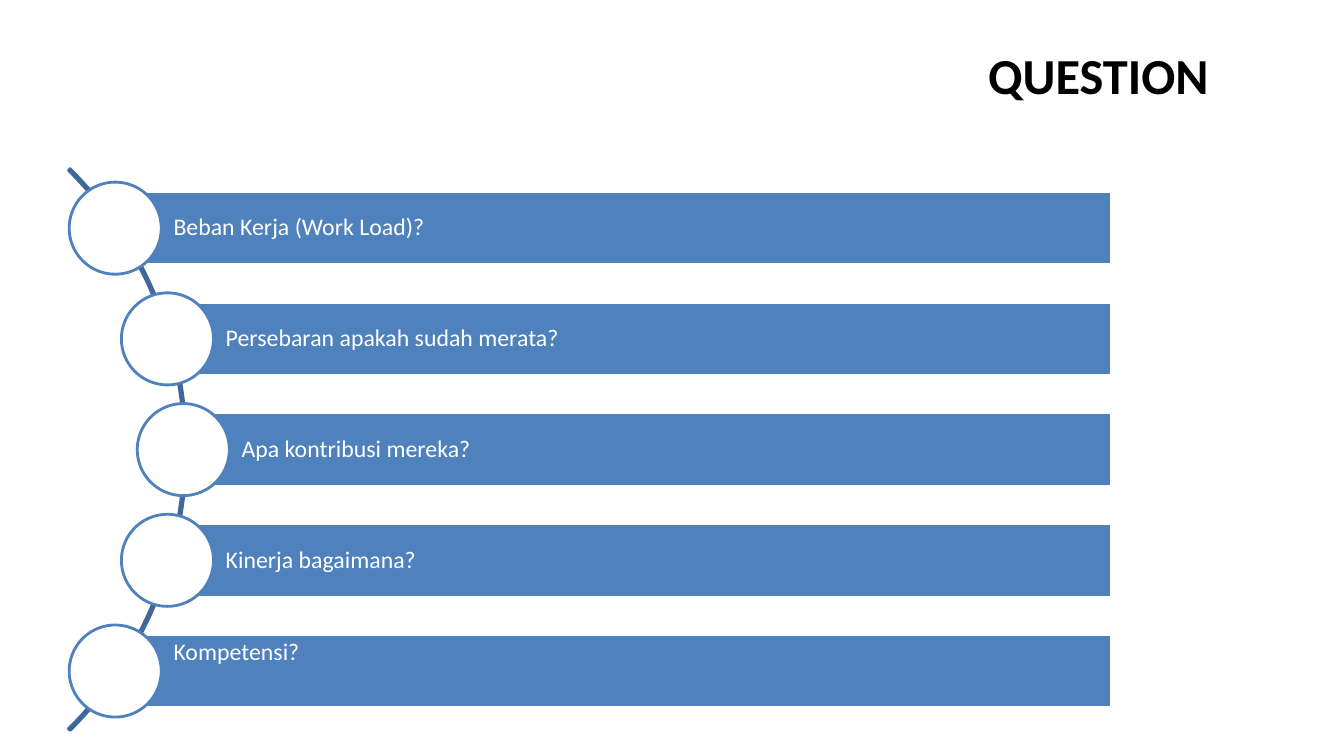
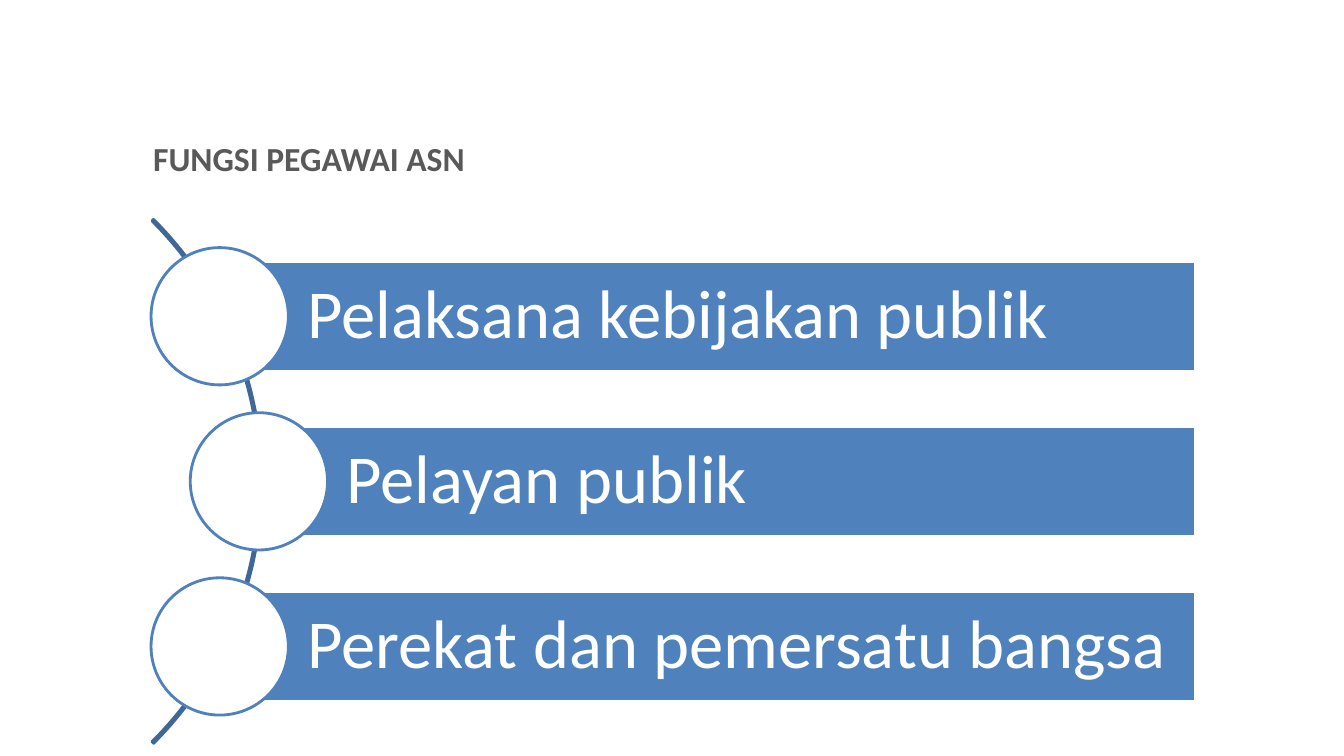
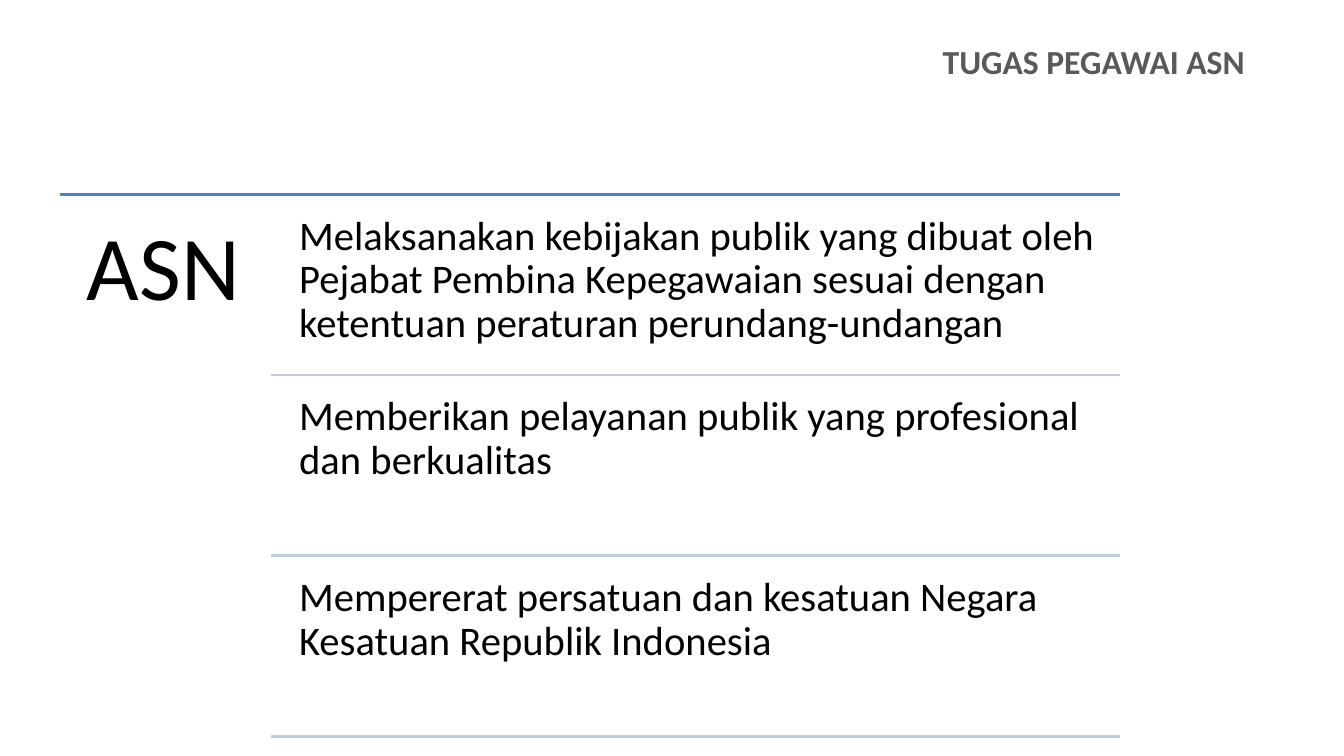
from math import sqrt

from lxml import etree
from pptx import Presentation
from pptx.dml.color import RGBColor
from pptx.enum.shapes import MSO_CONNECTOR, MSO_SHAPE
from pptx.enum.text import MSO_ANCHOR, PP_ALIGN
from pptx.oxml.ns import qn
from pptx.util import Cm, Pt

# Shared style
FONT = "Calibri"
BLUE, DARK_BLUE, PALE_BLUE = "4F81BD", "3F6797", "C2CDE1"
WHITE, BLACK, GREY = "FFFFFF", "000000", "595959"
LINE_WIDTH = 2
LEFT, RIGHT = PP_ALIGN.LEFT, PP_ALIGN.RIGHT
TOP, MIDDLE = MSO_ANCHOR.TOP, MSO_ANCHOR.MIDDLE

# Content; lengths in centimetres, text sizes in points
QUESTIONS = {
    "title": ("QUESTION", (17.93, 0.99, 12.78, 1.19), 36, BLACK, RIGHT),
    "bars": [
        ("Beban Kerja (Work Load)?", MIDDLE),
        ("Persebaran apakah sudah merata?", MIDDLE),
        ("Apa kontribusi mereka?", MIDDLE),
        ("Kinerja bagaimana?", MIDDLE),
        ("Kompetensi?", TOP),
    ],
    "centre": (-5.31, 11.33), "arc": 20.02, "pitch": 2.79, "bar_height": 1.85,
    "circle": 2.32, "bar_right": 28.02, "size": 17, "insets": (1.47, 0.13),
}
FUNCTIONS = {
    "title": ("FUNGSI PEGAWAI ASN", (3.61, 3.35, 27.99, 1.19), 24, GREY, LEFT),
    "bars": [
        ("Pelaksana kebijakan publik", MIDDLE),
        ("Pelayan publik", MIDDLE),
        ("Perekat dan pemersatu bangsa", MIDDLE),
    ],
    "centre": (-2.73, 12.13), "arc": 18.67, "pitch": 4.16, "bar_height": 2.77,
    "circle": 3.46, "bar_right": 30.12, "size": 49, "insets": (2.21, 0.35),
}
DUTIES_TITLE = ("TUGAS PEGAWAI ASN", (9.65, 0.91, 21.97, 1.19), 24, GREY, RIGHT)
DUTIES_LABEL = "ASN"
DUTIES = [
    "Melaksanakan kebijakan publik yang dibuat oleh Pejabat Pembina Kepegawaian "
    "sesuai dengan ketentuan peraturan perundang-undangan",
    "Memberikan pelayanan publik yang profesional dan berkualitas",
    "Mempererat persatuan dan kesatuan Negara Kesatuan Republik Indonesia",
]


def rgb(color):
    return RGBColor.from_string(color)


def set_text(sp, text, size, color, insets=(0.25, 0.13, 0.25, 0.13),
             align=LEFT, anchor=TOP, bold=False, spacing=0.9):
    """Insets run left, top, right, bottom."""
    tf = sp.text_frame
    tf.word_wrap = True
    tf.vertical_anchor = anchor
    tf.margin_left, tf.margin_top, tf.margin_right, tf.margin_bottom = map(Cm, insets)
    tf.text = text
    p = tf.paragraphs[0]
    p.alignment = align
    p.line_spacing = spacing
    font = p.runs[0].font
    font.name, font.size, font.bold = FONT, Pt(size), bold
    font.color.rgb = rgb(color)


def add_text(s, box, *args, **kwargs):
    set_text(s.shapes.add_textbox(*map(Cm, box)), *args, **kwargs)


def add_shape(s, kind, box, line, fill=None):
    sp = s.shapes.add_shape(kind, *map(Cm, box))
    sp.shadow.inherit = False
    if fill:
        sp.fill.solid()
        sp.fill.fore_color.rgb = rgb(fill)
    else:
        sp.fill.background()
    sp.line.color.rgb = rgb(line)
    sp.line.width = Pt(LINE_WIDTH)
    return sp


def add_rule(s, left, right, y, color):
    rule = s.shapes.add_connector(MSO_CONNECTOR.STRAIGHT, Cm(left), Cm(y), Cm(right), Cm(y))
    rule.line.color.rgb = rgb(color)
    rule.line.width = Pt(LINE_WIDTH)
    etree.SubElement(rule._element.spPr, qn("a:effectLst"))


def add_slide(prs, title):
    s = prs.slides.add_slide(prs.slide_layouts[6])
    text, box, size, color, align = title
    add_text(s, box, text, size, color, align=align, bold=True, spacing=1)
    return s


def add_curved_list(prs, spec):
    """Bars whose circles sit on an arc, evenly spaced around its centre."""
    s = add_slide(prs, spec["title"])
    cx, cy = spec["centre"]
    radius = spec["arc"] / 2
    arc = add_shape(s, MSO_SHAPE.BLOCK_ARC,
                    (cx - radius, cy - radius, spec["arc"], spec["arc"]), DARK_BLUE)
    for i, value in enumerate((189, 27, 0.003)):
        arc.adjustments[i] = value

    height, circle = spec["bar_height"], spec["circle"]
    indent, inset = spec["insets"]
    track = radius - 0.08
    middle = (len(spec["bars"]) - 1) / 2
    for i, (text, anchor) in enumerate(spec["bars"]):
        dy = (i - middle) * spec["pitch"]
        x, y = cx + sqrt(track ** 2 - dy ** 2), cy + dy
        bar = add_shape(s, MSO_SHAPE.RECTANGLE,
                        (x, y - height / 2, spec["bar_right"] - x, height), WHITE, BLUE)
        set_text(bar, text, spec["size"], WHITE, (indent, inset, inset, inset), anchor=anchor)
        add_shape(s, MSO_SHAPE.OVAL,
                  (x - circle / 2, y - circle / 2, circle, circle), BLUE, WHITE)


def add_duties(prs):
    """A label beside ruled rows of text."""
    s = add_slide(prs, DUTIES_TITLE)
    left, row_left, right, top, pitch = 1.5, 6.83, 28.22, 4.9, 4.55
    text_left = row_left + 0.41
    add_rule(s, left, right, top, BLUE)
    add_text(s, (left, top, row_left - left, 13.87), DUTIES_LABEL, 65, BLACK, (0.69,) * 4)
    for i, duty in enumerate(DUTIES):
        y = top + i * pitch
        add_text(s, (text_left, y + 0.22, right - text_left, 4.34), duty, 29, BLACK, (0.3,) * 4)
        add_rule(s, row_left, right, y + pitch, PALE_BLUE)


def main():
    prs = Presentation()
    prs.slide_width, prs.slide_height = Cm(33.87), Cm(19.05)
    for spec in (QUESTIONS, FUNCTIONS):
        add_curved_list(prs, spec)
    add_duties(prs)
    prs.save("out.pptx")


if __name__ == "__main__":
    main()
